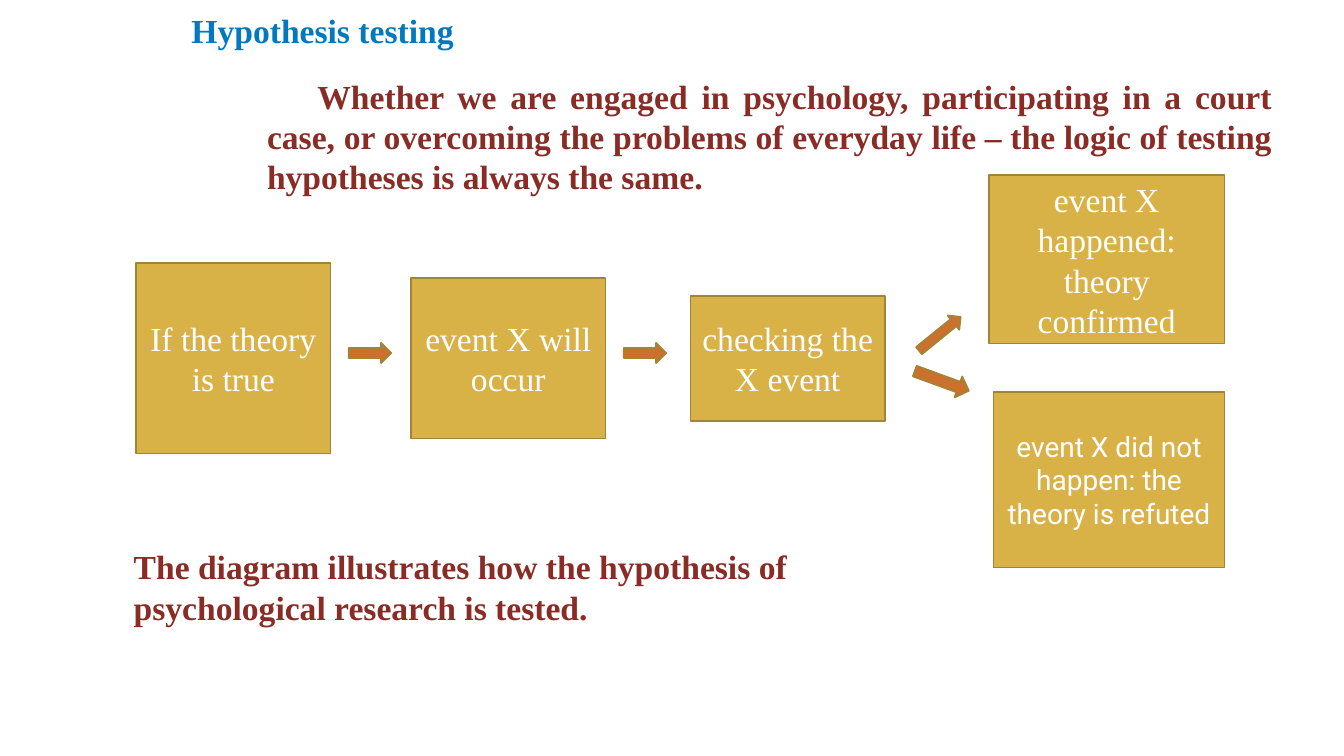
from pptx import Presentation
from pptx.dml.color import RGBColor
from pptx.enum.shapes import MSO_SHAPE
from pptx.enum.text import MSO_ANCHOR, MSO_AUTO_SIZE, PP_ALIGN
from pptx.util import Cm, Pt

COLORS = {
    "title": "0179C0",
    "body": "882C25",
    "box": "D9B247",
    "outline": "A18435",
    "arrow": "CC702D",
    "box_text": "FFFFFF",
}
SERIF = "Times New Roman"


def color(name):
    return RGBColor.from_string(COLORS[name])


def write(tf, text, color_name, size=24, font=SERIF, bold=False,
          align=PP_ALIGN.LEFT):
    p = tf.paragraphs[0]
    p.alignment = align
    r = p.add_run()
    r.text = text
    r.font.name = font
    r.font.size = Pt(size)
    r.font.bold = bold
    r.font.color.rgb = color(color_name)
    return p


def add_title(s, box, text):
    sp = s.shapes.title
    sp.left, sp.top, sp.width, sp.height = map(Cm, box)
    tf = sp.text_frame
    tf.word_wrap = False
    tf.auto_size = MSO_AUTO_SIZE.NONE
    tf.vertical_anchor = MSO_ANCHOR.TOP
    write(tf, text, "title", bold=True)


def add_statement(s, box, text, align=PP_ALIGN.LEFT, indent=0):
    tf = s.shapes.add_textbox(*map(Cm, box)).text_frame
    tf.word_wrap = True
    p = write(tf, text, "body", bold=True, align=align)
    if indent:
        p._p.get_or_add_pPr().set("indent", str(Cm(indent)))


def add_block(s, shape, box, fill):
    sp = s.shapes.add_shape(shape, *map(Cm, box))
    sp.shadow.inherit = False
    sp.fill.solid()
    sp.fill.fore_color.rgb = color(fill)
    sp.line.color.rgb = color("outline")
    sp.line.width = Pt(1.25)
    return sp


def add_box(s, box, text, size=24, font=SERIF):
    tf = add_block(s, MSO_SHAPE.RECTANGLE, box, "box").text_frame
    tf.word_wrap = True
    tf.vertical_anchor = MSO_ANCHOR.MIDDLE
    write(tf, text, "box_text", size, font, align=PP_ALIGN.CENTER)


def add_arrow(s, box, angle=0):
    add_block(s, MSO_SHAPE.RIGHT_ARROW, box, "arrow").rotation = angle


def add_steps(s, box):
    """Boxes of falling height on one centre line, with arrows between."""
    left, top, width, height = box
    middle = top + height / 2
    box_width = 4.9
    steps = [
        (0, 4.8, "If the theory is true"),
        (6.93, 4.04, "event X will occur"),
        (width - box_width, 3.15, "checking the X event"),
    ]
    for x, h, text in steps:
        add_box(s, (left + x, middle - h / 2, box_width, h), text)
    for x, _, _ in steps[:-1]:
        add_arrow(s, (left + x + box_width + 0.46, middle - 0.39, 1.07, 0.51))


def add_outcomes(s, box):
    """Two arrows fanning out to the confirmed and refuted boxes."""
    left, top, width, height = box
    right, bottom = left + width, top + height
    add_box(s, (right - 5.82, bottom - 4.42, 5.82, 4.42),
            "event X did not happen: the theory is refuted", 20, "Roboto")
    add_box(s, (right - 5.94, top, 5.94, 4.24),
            "event X happened: theory confirmed")
    add_arrow(s, (left, top + 3.76, 1.35, 0.46), -39)
    add_arrow(s, (left, top + 4.9, 1.45, 0.56), 20)


def main():
    prs = Presentation()
    prs.slide_width, prs.slide_height = Cm(33.87), Cm(19.05)
    s = prs.slides.add_slide(prs.slide_layouts[5])
    add_title(s, (4.57, 0.13, 7.34, 1.27), "Hypothesis testing")
    add_statement(
        s, (6.48, 1.78, 25.83, 3.33),
        "Whether we are engaged in psychology, participating in a court case, "
        "or overcoming the problems of everyday life – the logic of testing "
        "hypotheses is always the same.",
        PP_ALIGN.JUSTIFY, indent=1.27)
    add_steps(s, (3.43, 6.63, 18.87, 4.8))
    add_outcomes(s, (23.01, 4.42, 7.85, 9.88))
    add_statement(
        s, (3.12, 13.64, 21.13, 2.31),
        "The diagram illustrates how the hypothesis of psychological research "
        "is tested.")
    prs.save("out.pptx")


if __name__ == "__main__":
    main()
